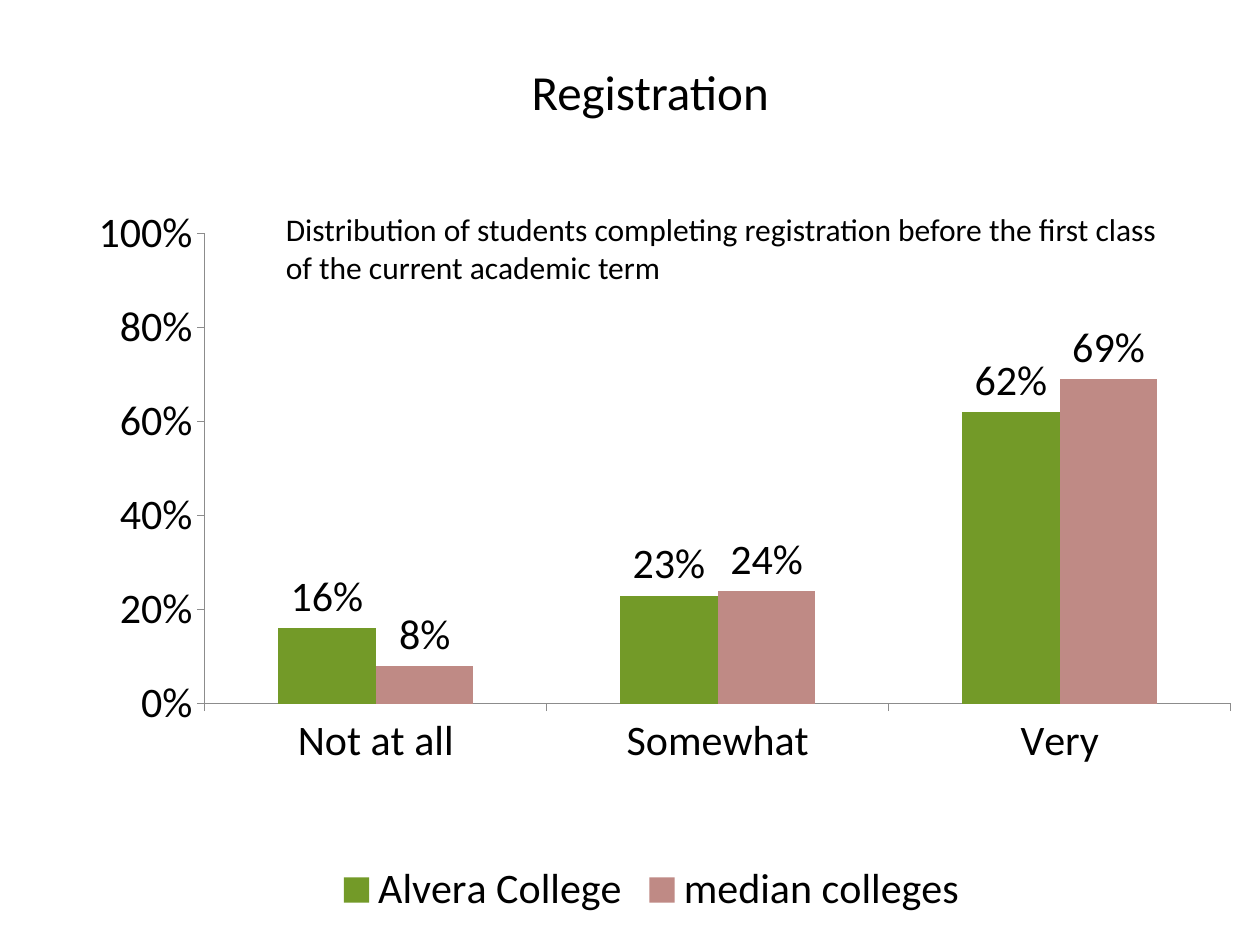
import pptx
import pptx.chart.data
import pptx.dml.color
import pptx.enum.chart
import pptx.enum.text
import pptx.oxml
import pptx.util

COLORS = {"text": "000000", "axis": "8C8C8C", "college": "739A28", "median": "BF8A85"}
CATEGORIES = ["Not at all", "Somewhat", "Very"]
SERIES = [
    ("Alvera College", [0.16, 0.23, 0.62], "college"),
    ("median colleges", [0.08, 0.24, 0.69], "median"),
]
PLOT = {"x": 0.127, "y": 0.047, "w": 0.857, "h": 0.649}


def apply(obj, values):
    for name, value in values.items():
        setattr(obj, name, value)


class Deck:
    font = "Calibri"

    def __init__(self, width, height):
        self.prs = pptx.Presentation()
        self.prs.slide_width = pptx.util.Inches(width)
        self.prs.slide_height = pptx.util.Inches(height)
        self.s = None

    def add_slide(self):
        self.s = self.prs.slides.add_slide(self.prs.slide_layouts[5])

    def color(self, key):
        return pptx.dml.color.RGBColor.from_string(COLORS[key])

    def box(self, x, y, w, h):
        sw, sh = self.prs.slide_width, self.prs.slide_height
        return int(x * sw), int(y * sh), int(w * sw), int(h * sh)

    def style(self, font, size):
        apply(font, {"name": self.font, "size": pptx.util.Pt(size), "bold": False})
        font.color.rgb = self.color("text")

    def fill_text(self, sp, text, size, align, anchor):
        tf = sp.text_frame
        apply(tf, {"word_wrap": True, "vertical_anchor": anchor})
        p = tf.paragraphs[0]
        p.alignment = align
        r = p.add_run()
        r.text = text
        self.style(r.font, size)

    def title(self, text, area, size):
        sp = self.s.shapes.title
        apply(sp, dict(zip(("left", "top", "width", "height"), self.box(*area))))
        self.fill_text(sp, text, size, pptx.enum.text.PP_ALIGN.CENTER,
                       pptx.enum.text.MSO_ANCHOR.MIDDLE)

    def text(self, text, area, size):
        sp = self.s.shapes.add_textbox(*self.box(*area))
        self.fill_text(sp, text, size, pptx.enum.text.PP_ALIGN.LEFT,
                       pptx.enum.text.MSO_ANCHOR.TOP)

    def axis(self, axis, size, values):
        apply(axis, {
            "has_major_gridlines": False,
            "major_tick_mark": pptx.enum.chart.XL_TICK_MARK.OUTSIDE,
            "minor_tick_mark": pptx.enum.chart.XL_TICK_MARK.NONE,
            **values,
        })
        self.style(axis.tick_labels.font, size)
        axis.format.line.color.rgb = self.color("axis")
        axis.format.line.width = pptx.util.Pt(0.5)

    def place_plot(self, chart, plot):
        area = chart.plots[0]._element.getparent()
        for old in area.findall(pptx.oxml.ns.qn("c:layout")):
            area.remove(old)
        modes = '<c:layoutTarget val="inner"/><c:xMode val="edge"/><c:yMode val="edge"/>'
        sizes = "".join(f'<c:{k} val="{v}"/>' for k, v in plot.items())
        area.insert(0, pptx.oxml.parse_xml(
            f'<c:layout {pptx.oxml.ns.nsdecls("c")}><c:manualLayout>'
            f"{modes}{sizes}</c:manualLayout></c:layout>"))

    def columns(self, categories, series, area, size, plot):
        data = pptx.chart.data.CategoryChartData(number_format="0%")
        data.categories = categories
        for name, values, _ in series:
            data.add_series(name, values)
        chart = self.s.shapes.add_chart(
            pptx.enum.chart.XL_CHART_TYPE.COLUMN_CLUSTERED, *self.box(*area), data).chart
        apply(chart, {"has_title": False, "has_legend": True})
        self.style(chart.font, size)
        apply(chart.legend, {"position": pptx.enum.chart.XL_LEGEND_POSITION.BOTTOM,
                             "include_in_layout": False})
        self.style(chart.legend.font, size)
        self.axis(chart.category_axis, size, {})
        self.axis(chart.value_axis, size,
                  {"minimum_scale": 0, "maximum_scale": 1, "major_unit": 0.2})
        apply(chart.value_axis.tick_labels,
              {"number_format": "0%", "number_format_is_linked": False})
        apply(chart.plots[0], {"gap_width": 150, "overlap": 0, "vary_by_categories": False})
        for ser, (_, _, key) in zip(chart.plots[0].series, series):
            ser.format.fill.solid()
            ser.format.fill.fore_color.rgb = self.color(key)
            labels = ser.data_labels
            apply(labels, {
                "show_value": True,
                "number_format": "0%",
                "number_format_is_linked": False,
                "position": pptx.enum.chart.XL_LABEL_POSITION.OUTSIDE_END,
            })
            self.style(labels.font, size)
        self.place_plot(chart, plot)


def main():
    deck = Deck(10, 7.5)
    deck.add_slide()
    deck.title("Registration", (0.085, 0, 0.862, 0.193), 28)
    deck.columns(CATEGORIES, SERIES, (0.042, 0.211, 0.95, 0.767), 24, PLOT)
    deck.text("Distribution of students completing registration before the first class "
              "of the current academic term", (0.217, 0.216, 0.731, 0.095), 18)
    deck.prs.save("out.pptx")


if __name__ == "__main__":
    main()
